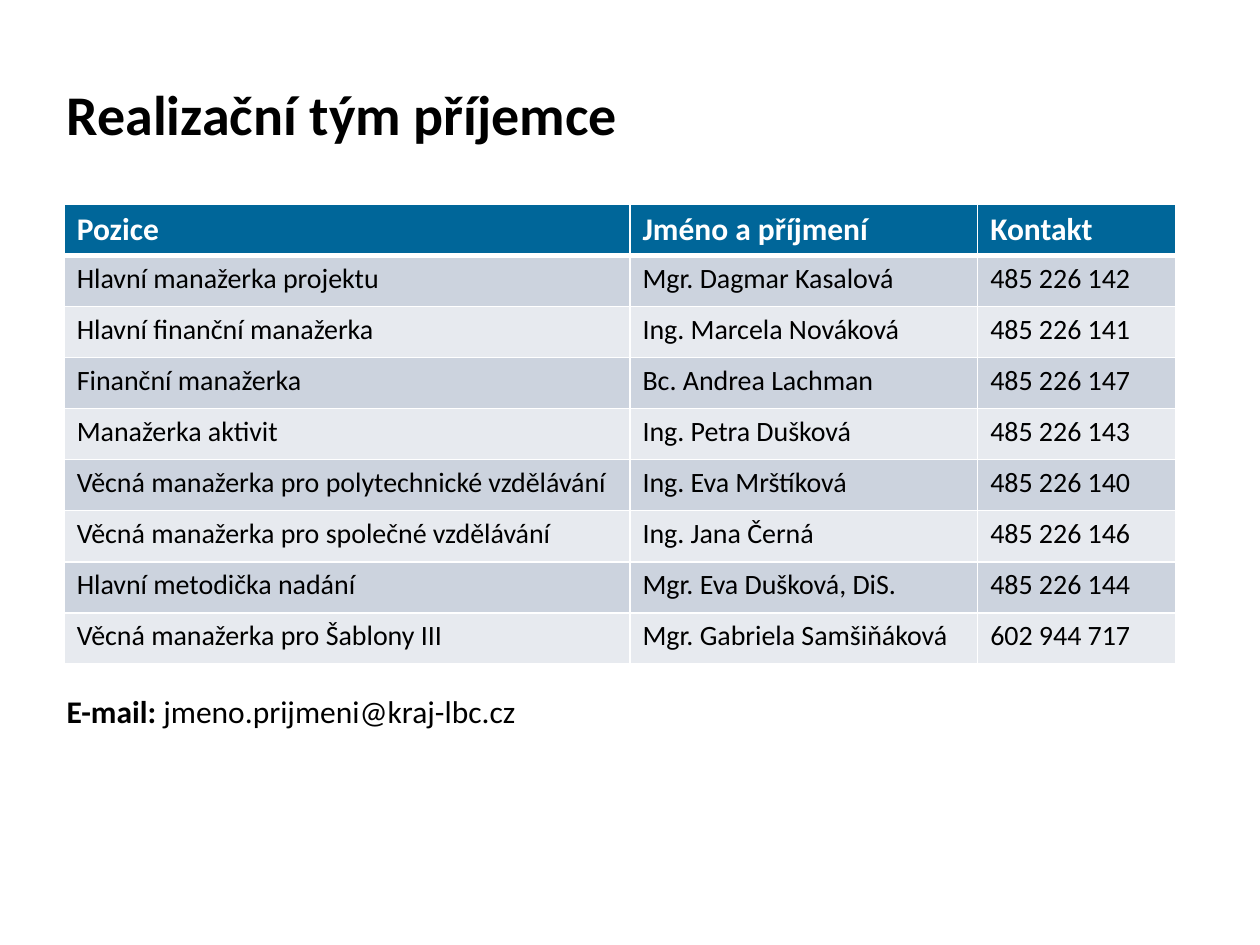
from dataclasses import dataclass
from typing import NamedTuple

from lxml import etree
from pptx import Presentation
from pptx.dml.color import RGBColor
from pptx.enum.text import MSO_ANCHOR, MSO_AUTO_SIZE, PP_ALIGN
from pptx.oxml.ns import qn
from pptx.util import Inches, Pt

LEFT = PP_ALIGN.LEFT
TOP = MSO_ANCHOR.TOP
NO_FIT = MSO_AUTO_SIZE.NONE
TITLE_ONLY = 5

# The slide is a grid of 100 columns by 75 rows
WIDE, HIGH = Inches(10), Inches(7.5)
COL, ROW = WIDE / 100, HIGH / 75


@dataclass(frozen=True)
class Theme:
    font: str = "Calibri"
    ink: str = "000000"
    white: str = "FFFFFF"
    head: str = "006699"
    bands: tuple = ("CCD3DE", "E7EAEF")
    title: int = 32
    lead: int = 18
    body: int = 16
    thin: int = 1
    thick: int = 3


class Box(NamedTuple):
    x: float
    y: float
    w: float
    h: float

    def spans(self) -> tuple:
        return (round(self.x * COL), round(self.y * ROW),
                round(self.w * COL), round(self.h * ROW))


class Part(NamedTuple):
    text: str
    size: int
    bold: bool = False
    color: str = "000000"


class Member(NamedTuple):
    post: str
    name: str
    phone: str


THEME = Theme()
TITLE_BOX = Box(4.3, 5.8, 51.2, 6.4)
TABLE_BOX = Box(5.1, 16.2, 88.2, 36.5)
MAIL_BOX = Box(4.3, 54.4, 66.9, 4)
WIDTHS = (44.9, 27.6, 15.7)

HEAD = Member("Pozice", "Jméno a příjmení", "Kontakt")
TEAM = [
    Member("Hlavní manažerka projektu", "Mgr. Dagmar Kasalová", "485 226 142"),
    Member("Hlavní finanční manažerka", "Ing. Marcela Nováková", "485 226 141"),
    Member("Finanční manažerka", "Bc. Andrea Lachman", "485 226 147"),
    Member("Manažerka aktivit", "Ing. Petra Dušková", "485 226 143"),
    Member("Věcná manažerka pro polytechnické vzdělávání",
           "Ing. Eva Mrštíková", "485 226 140"),
    Member("Věcná manažerka pro společné vzdělávání",
           "Ing. Jana Černá", "485 226 146"),
    Member("Hlavní metodička nadání", "Mgr. Eva Dušková, DiS.", "485 226 144"),
    Member("Věcná manažerka pro Šablony III",
           "Mgr. Gabriela Samšiňáková", "602 944 717"),
]


def write(frame, parts: list[Part]) -> None:
    line = frame.paragraphs[0]
    line.alignment = LEFT
    for part in parts:
        run = line.add_run()
        run.text = part.text
        run.font.name = THEME.font
        run.font.size = Pt(part.size)
        run.font.bold = part.bold
        run.font.color.rgb = RGBColor.from_string(part.color)


def place(shape, box: Box, parts: list[Part]) -> None:
    shape.left, shape.top, shape.width, shape.height = box.spans()
    frame = shape.text_frame
    frame.word_wrap = True
    frame.auto_size = NO_FIT
    frame.vertical_anchor = TOP
    write(frame, parts)


def edge(cell, top: int, base: int) -> None:
    props = cell._tc.get_or_add_tcPr()
    sides = {"lnL": THEME.thin, "lnR": THEME.thin, "lnT": top, "lnB": base}
    for spot, (side, width) in enumerate(sides.items()):
        line = etree.Element(qn(f"a:{side}"), w=str(Pt(width)))
        fill = etree.SubElement(line, qn("a:solidFill"))
        etree.SubElement(fill, qn("a:srgbClr"), val=THEME.white)
        props.insert(spot, line)


def draw_team(slide, box: Box) -> None:
    rows = [HEAD, *TEAM]
    grid = slide.shapes.add_table(len(rows), len(WIDTHS), *box.spans()).table
    for col, width in zip(grid.columns, WIDTHS):
        col.width = round(width * COL)
    for r, member in enumerate(rows):
        first = r == 0
        grid.rows[r].height = round(box.h * ROW / len(rows))
        shade = THEME.head if first else THEME.bands[(r - 1) % 2]
        size = THEME.lead if first else THEME.body
        color = THEME.white if first else THEME.ink
        top = THEME.thick if r == 1 else THEME.thin
        base = THEME.thick if first else THEME.thin
        for c, text in enumerate(member):
            cell = grid.cell(r, c)
            cell.fill.solid()
            cell.fill.fore_color.rgb = RGBColor.from_string(shade)
            edge(cell, top, base)
            write(cell.text_frame, [Part(text, size, first, color)])


def main() -> None:
    deck = Presentation()
    deck.slide_width, deck.slide_height = WIDE, HIGH
    slide = deck.slides.add_slide(deck.slide_layouts[TITLE_ONLY])

    # Title
    place(slide.shapes.title, TITLE_BOX,
          [Part("Realizační tým příjemce", THEME.title, True)])

    # Team table
    draw_team(slide, TABLE_BOX)

    # E-mail line
    mail = slide.shapes.add_textbox(*MAIL_BOX.spans())
    place(mail, MAIL_BOX, [Part("E-mail: ", THEME.lead, True),
                           Part("jmeno.prijmeni@kraj-lbc.cz", THEME.lead)])

    deck.save("out.pptx")


if __name__ == "__main__":
    main()
